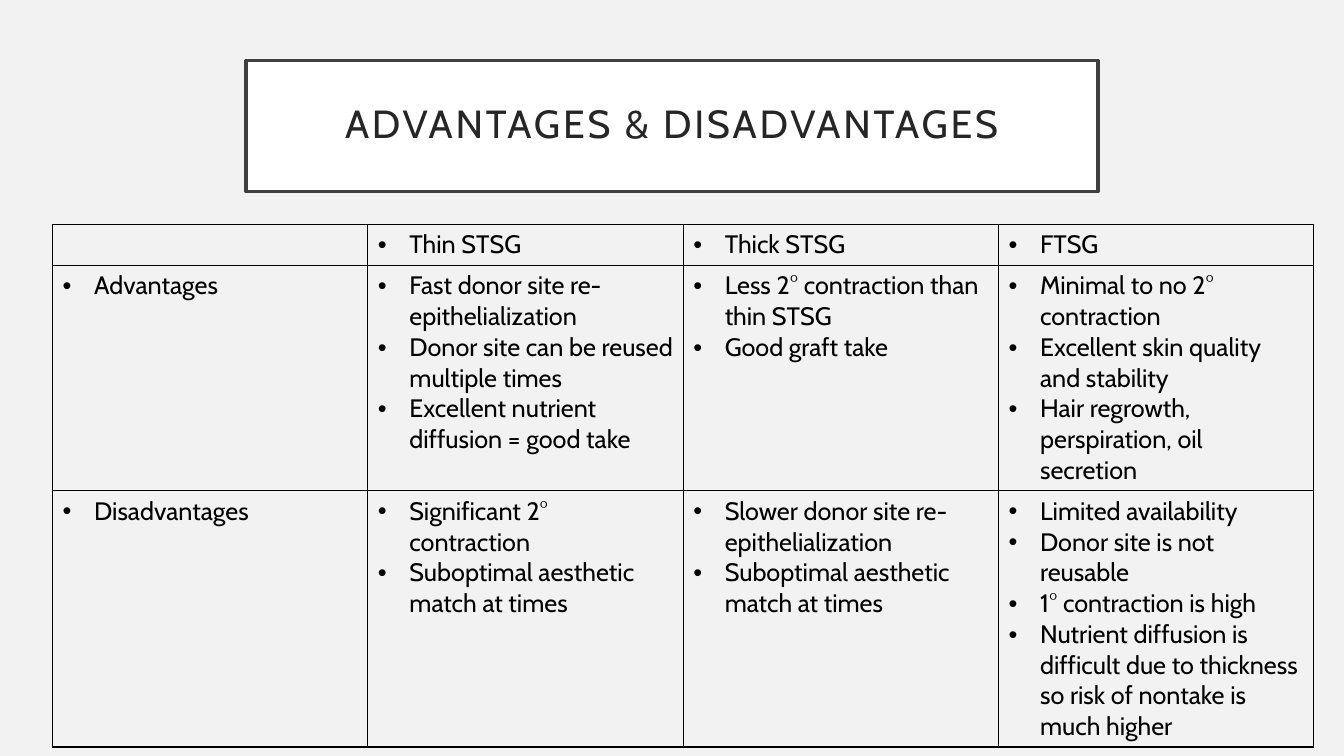
"""Build a slide comparing skin graft advantages and disadvantages."""
import pptx
import pptx.dml.color
import pptx.enum.shapes
import pptx.enum.text
import pptx.oxml
import pptx.oxml.ns
import pptx.util

Pt = pptx.util.Pt

GRAFTS = [
    [[], ["Thin STSG"], ["Thick STSG"], ["FTSG"]],
    [
        ["Advantages"],
        ["Fast donor site re-epithelialization",
         "Donor site can be reused multiple times",
         "Excellent nutrient diffusion = good take"],
        ["Less 2° contraction than thin STSG", "Good graft take"],
        ["Minimal to no 2° contraction",
         "Excellent skin quality and stability",
         "Hair regrowth, perspiration, oil secretion"],
    ],
    [
        ["Disadvantages"],
        ["Significant 2° contraction", "Suboptimal aesthetic match at times"],
        ["Slower donor site re-epithelialization",
         "Suboptimal aesthetic match at times"],
        ["Limited availability",
         "Donor site is not reusable",
         "1° contraction is high",
         "Nutrient diffusion is difficult due to thickness "
         "so risk of nontake is much higher"],
    ],
]


def color(code):
    return pptx.dml.color.RGBColor.from_string(code)


def node(text):
    head, tail = text.split(" ", 1)
    return pptx.oxml.parse_xml(f"<a:{head} {pptx.oxml.ns.nsdecls('a')} {tail}")


class Deck:
    font = "Cabin"
    ink = "000000"
    indent = 22.5

    def __init__(self, wide, high, back):
        self.show = pptx.Presentation()
        self.show.slide_width, self.show.slide_height = Pt(wide), Pt(high)
        self.slide = self.show.slides.add_slide(self.show.slide_layouts[6])
        fill = self.slide.background.fill
        fill.solid()
        fill.fore_color.rgb = color(back)

    def run(self, para, text, size, ink):
        run = para.add_run()
        run.text = text
        run.font.name = self.font
        run.font.size = Pt(size)
        run.font.color.rgb = color(ink)
        return run

    def title(self, text, box):
        shape = self.slide.shapes.add_shape(
            pptx.enum.shapes.MSO_SHAPE.RECTANGLE, *map(Pt, box))
        shape.shadow.inherit = False
        shape.fill.solid()
        shape.fill.fore_color.rgb = color("FFFFFF")
        shape.line.color.rgb = color("404040")
        shape.line.width = Pt(2.5)
        frame = shape.text_frame
        frame.word_wrap = True
        frame.vertical_anchor = pptx.enum.text.MSO_ANCHOR.MIDDLE
        frame.margin_left = frame.margin_right = Pt(14.4)
        frame.margin_top = frame.margin_bottom = Pt(14.4)
        para = frame.paragraphs[0]
        para.alignment = pptx.enum.text.PP_ALIGN.CENTER
        para.line_spacing = 0.9
        run = self.run(para, text, 28, "262626")
        run.font._element.set("spc", "200")

    def bullet(self, para, text):
        props = para._p.get_or_add_pPr()
        props.set("marL", str(Pt(self.indent)))
        props.set("indent", str(-Pt(self.indent)))
        props.append(node('buFont typeface="Arial"/>'))
        props.append(node('buChar char="•"/>'))
        self.run(para, text, 18, self.ink)

    def cell(self, cell, items):
        props = cell._tc.get_or_add_tcPr()
        for side in ("lnL", "lnR", "lnT", "lnB"):
            props.append(node(
                f'{side} w="{Pt(1)}"><a:solidFill><a:srgbClr val="{self.ink}"/>'
                f"</a:solidFill></a:{side}>"))
        cell.fill.background()
        frame = cell.text_frame
        for i, item in enumerate(items):
            para = frame.add_paragraph() if i else frame.paragraphs[0]
            self.bullet(para, item)

    def table(self, rows, left, top, wide, high):
        count = len(rows[0])
        table = self.slide.shapes.add_table(
            len(rows), count, Pt(left), Pt(top),
            Pt(wide * count), Pt(high * len(rows))).table
        table.first_row = table.horz_banding = False
        for r, row in enumerate(rows):
            for c, items in enumerate(row):
                self.cell(table.cell(r, c), items)


def main():
    deck = Deck(960, 540, "F2F2F2")
    deck.title("ADVANTAGES & DISADVANTAGES", (175.8, 43.2, 608.4, 93.6))
    deck.table(GRAFTS, 37.5, 160.4, 225.25, 29.2)
    deck.show.save("out.pptx")


if __name__ == "__main__":
    main()
